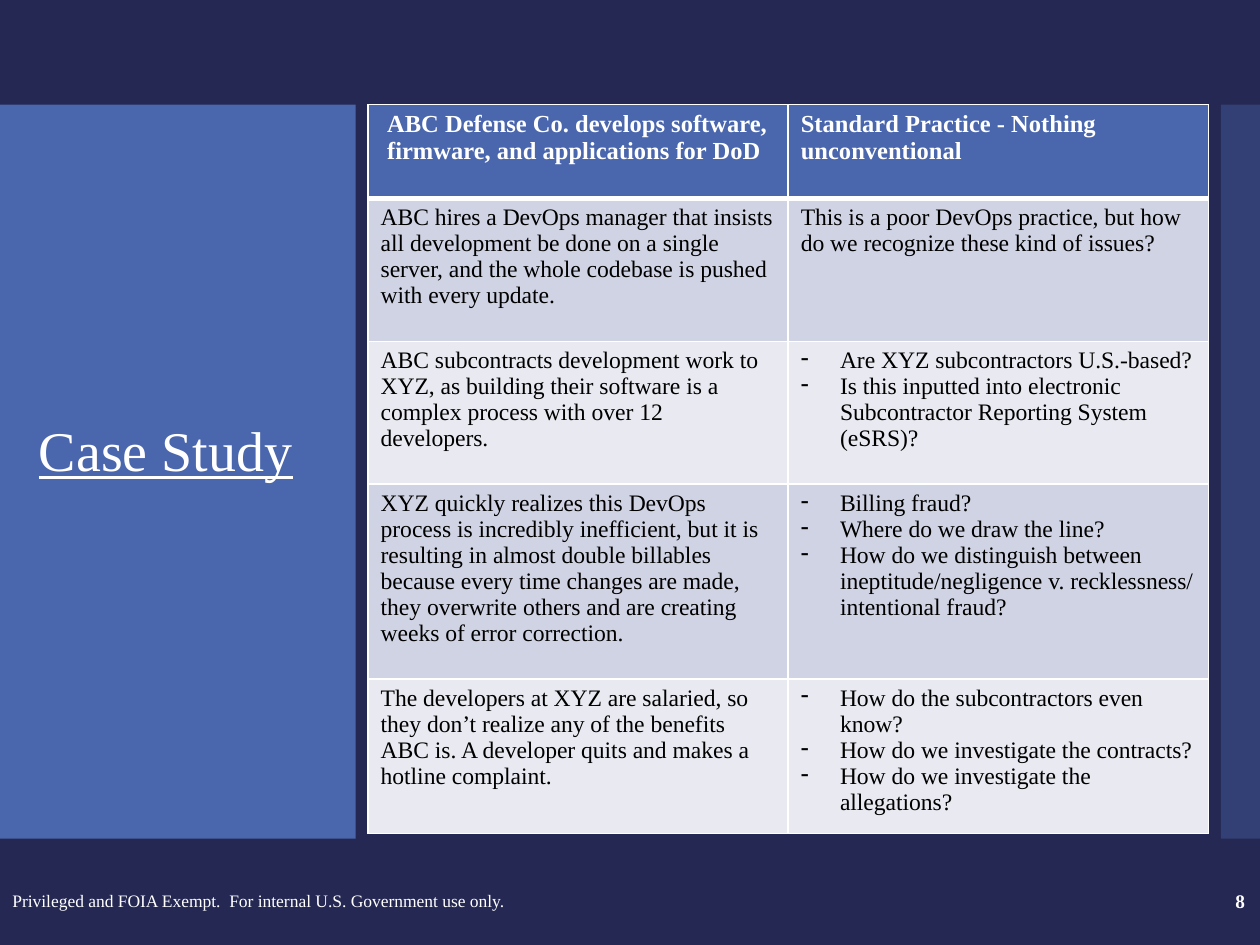
from dataclasses import dataclass

from lxml.etree import SubElement
from pptx import Presentation
from pptx.dml.color import RGBColor
from pptx.enum.shapes import MSO_SHAPE as Preset
from pptx.enum.text import MSO_ANCHOR as Anchor, MSO_AUTO_SIZE as AutoSize, PP_ALIGN as Align
from pptx.oxml.ns import qn
from pptx.util import Cm, Pt

COLORS = {
    "background": "242852",
    "accent": "4A66AC",
    "odd_row": "D0D3E3",
    "even_row": "E9EAF1",
    "white": "FFFFFF",
    "black": "000000",
}
FONT = "Times New Roman"
TITLE_ONLY = 5
HANGING = Cm(0.79)
THIN, THICK = Pt(1), Pt(3)


@dataclass
class Box:
    left: float
    top: float
    width: float
    height: float

    def lengths(self) -> tuple:
        return Cm(self.left), Cm(self.top), Cm(self.width), Cm(self.height)


@dataclass
class CaseRow:
    height: float
    event: str
    questions: list[str]
    bulleted: bool = True


HEADER = CaseRow(
    1.89,
    "ABC Defense Co. develops software, firmware, and applications for DoD",
    ["Standard Practice - Nothing unconventional"],
    bulleted=False,
)
CASE_ROWS = [
    CaseRow(
        2.88,
        "ABC hires a DevOps manager that insists all development be done on a single server, "
        "and the whole codebase is pushed with every update.",
        ["This is a poor DevOps practice, but how do we recognize these kind of issues?"],
        bulleted=False,
    ),
    CaseRow(
        2.88,
        "ABC subcontracts development work to XYZ, as building their software is a complex "
        "process with over 12 developers.",
        [
            "Are XYZ subcontractors U.S.-based?",
            "Is this inputted into electronic Subcontractor Reporting System (eSRS)?",
        ],
    ),
    CaseRow(
        3.93,
        "XYZ quickly realizes this DevOps process is incredibly inefficient, but it is resulting "
        "in almost double billables because every time changes are made, they overwrite others "
        "and are creating weeks of error correction.",
        [
            "Billing fraud?",
            "Where do we draw the line?",
            "How do we distinguish between ineptitude/negligence v. recklessness/ intentional fraud?",
        ],
    ),
    CaseRow(
        2.88,
        "The developers at XYZ are salaried, so they don’t realize any of the benefits ABC is. "
        "A developer quits and makes a hotline complaint.",
        [
            "How do the subcontractors even know?",
            "How do we investigate the contracts?",
            "How do we investigate the allegations?",
        ],
    ),
]


def color(name: str) -> RGBColor:
    return RGBColor.from_string(COLORS[name])


def fill_solid(fill, name: str) -> None:
    fill.solid()
    fill.fore_color.rgb = color(name)


def write(paragraph, text: str, *, size: float, ink: str = "white", bold: bool = False,
          underline: bool = False, align=Align.LEFT) -> None:
    paragraph.alignment = align
    run = paragraph.add_run()
    run.text = text
    font = run.font
    font.name, font.size = FONT, Pt(size)
    font.bold, font.underline = bold, underline
    font.color.rgb = color(ink)


def indent(paragraph, margin: int, first_line: int = 0, bullet: str = "") -> None:
    properties = paragraph._p.get_or_add_pPr()
    properties.set("marL", str(margin))
    properties.set("indent", str(first_line))
    if bullet:
        SubElement(properties, qn("a:buFontTx"))
        SubElement(properties, qn("a:buChar")).set("char", bullet)


def add_panel(slide, box: Box, opacity: int = 100) -> None:
    shape = slide.shapes.add_shape(Preset.RECTANGLE, *box.lengths())
    shape.shadow.inherit = False
    shape.line.fill.background()
    fill_solid(shape.fill, "accent")
    if opacity < 100:
        accent = shape._element.spPr.find(f"{qn('a:solidFill')}/{qn('a:srgbClr')}")
        SubElement(accent, qn("a:alpha")).set("val", str(opacity * 1000))


def add_title(slide, text: str, box: Box) -> None:
    title = slide.shapes.title
    title.left, title.top, title.width, title.height = box.lengths()
    frame = title.text_frame
    frame.word_wrap = True
    frame.auto_size = AutoSize.NONE
    frame.vertical_anchor = Anchor.MIDDLE
    frame.paragraphs[0].line_spacing = 0.9
    write(frame.paragraphs[0], text, size=32, underline=True)


def add_label(slide, text: str, box: Box, **text_format) -> None:
    frame = slide.shapes.add_textbox(*box.lengths()).text_frame
    frame.word_wrap = True
    frame.vertical_anchor = Anchor.MIDDLE
    write(frame.paragraphs[0], text, **text_format)


def style_cell(cell, fill: str, top: int = THIN, bottom: int = THIN) -> None:
    properties = cell._tc.get_or_add_tcPr()
    for side, width in (("L", THIN), ("R", THIN), ("T", top), ("B", bottom)):
        border = SubElement(properties, qn(f"a:ln{side}"), w=str(int(width)))
        solid = SubElement(border, qn("a:solidFill"))
        SubElement(solid, qn("a:srgbClr"), val=COLORS["white"])
    fill_solid(cell.fill, fill)


def fill_cell(cell, lines: list[str], bulleted: bool, **text_format) -> None:
    frame = cell.text_frame
    for index, line in enumerate(lines):
        paragraph = frame.add_paragraph() if index else frame.paragraphs[0]
        write(paragraph, line, **text_format)
        if bulleted:
            indent(paragraph, HANGING, -HANGING, "-")


def add_case_table(slide, left: float, top: float, width: float) -> None:
    rows = [HEADER, *CASE_ROWS]
    box = Box(left, top, width, sum(row.height for row in rows))
    table = slide.shapes.add_table(len(rows), 2, *box.lengths()).table
    for index, row in enumerate(rows):
        table.rows[index].height = Cm(row.height)
        if index == 0:
            fill, text_format = "accent", {"size": 14, "bold": True}
        else:
            fill = "odd_row" if index % 2 else "even_row"
            text_format = {"size": 13.5, "ink": "black"}
        for column, lines in enumerate(([row.event], row.questions)):
            cell = table.cell(index, column)
            style_cell(cell, fill, THICK if index == 1 else THIN, THICK if index == 0 else THIN)
            fill_cell(cell, lines, row.bulleted and column == 1, **text_format)
    indent(table.cell(0, 0).text_frame.paragraphs[0], Cm(0.13))


def main() -> None:
    presentation = Presentation()
    presentation.slide_width, presentation.slide_height = Cm(25.4), Cm(19.05)
    slide = presentation.slides.add_slide(presentation.slide_layouts[TITLE_ONLY])
    fill_solid(slide.background.fill, "background")
    add_panel(slide, Box(0, 2.11, 7.17, 14.8))
    add_panel(slide, Box(24.61, 2.11, 0.79, 14.8), opacity=40)
    add_title(slide, "Case Study", Box(0.53, 2.39, 6.15, 13.5))
    title_element = slide.shapes.title._element
    title_element.getparent().append(title_element)
    add_label(slide, "8", Box(22.15, 17.65, 3.2, 1.02), size=11, bold=True, align=Align.RIGHT)
    add_case_table(slide, 7.42, 2.11, 16.94)
    add_label(slide, "Privileged and FOIA Exempt.  For internal U.S. Government use only.",
              Box(0, 17.65, 12.32, 1.02), size=10)
    presentation.save("out.pptx")


if __name__ == "__main__":
    main()
